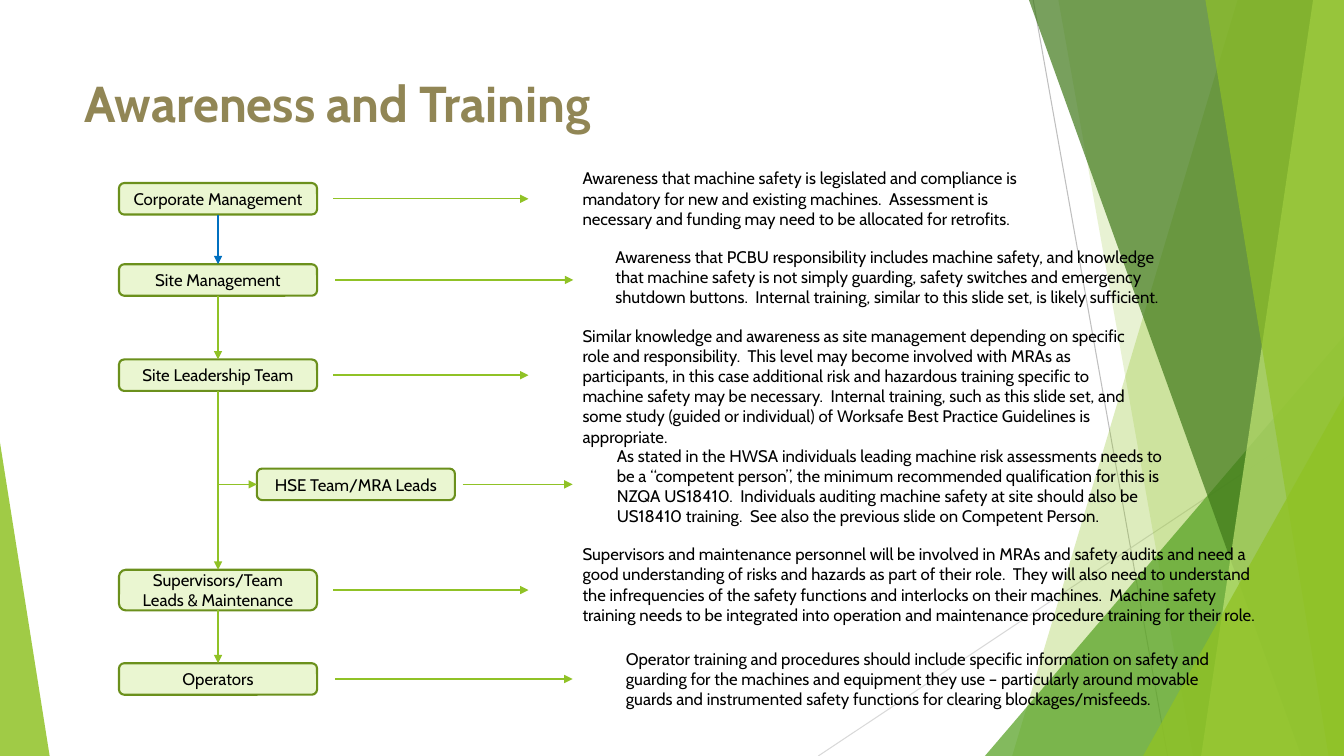
from collections import namedtuple
from dataclasses import dataclass

from lxml.etree import SubElement
from pptx import Presentation
from pptx.dml.color import RGBColor
from pptx.enum.shapes import MSO_CONNECTOR as Connector, MSO_SHAPE as Shape
from pptx.enum.text import MSO_ANCHOR as Anchor, MSO_AUTO_SIZE as AutoSize, PP_ALIGN as Align
from pptx.oxml.ns import qn
from pptx.util import Pt


@dataclass(frozen=True)
class Theme:
    """Colours, font and type sizes of the slide."""
    font: str = "Cabin"
    title_size: int = 36
    body_size: int = 12
    title: str = "918655"
    text: str = "000000"
    box: str = "EAF6D1"
    box_edge: str = "6B901C"
    lime: str = "90C226"
    pale_lime: str = "C0E474"
    green: str = "54A021"
    forest: str = "3F7819"
    blue: str = "0070C0"
    grey: str = "BFBFBF"
    pale_grey: str = "D9D9D9"


class Canvas:
    """Draws elements on one slide in one theme."""

    def __init__(self, slide, theme):
        """Keep the slide's shapes and the theme."""
        self.shapes = slide.shapes
        self.theme = theme

    def facet(self, shape, color, opacity):
        """Give a background shape a translucent fill without outline."""
        shape.shadow.inherit = False
        shape.line.fill.background()
        shape.fill.solid()
        shape.fill.fore_color.rgb = RGBColor.from_string(color)
        rgb = shape._element.spPr.find(qn("a:solidFill"))[0]
        SubElement(rgb, qn("a:alpha")).set("val", str(opacity * 1000))

    def band(self, top_left, bottom_left, color, opacity):
        """Draw a band from a slanted left edge to the slide's right edge."""
        outline = self.shapes.build_freeform(Pt(top_left), 0)
        corners = [(WIDTH, 0), (WIDTH, HEIGHT), (bottom_left, HEIGHT)]
        outline.add_line_segments([(Pt(x), Pt(y)) for x, y in corners])
        self.facet(outline.convert_to_shape(), color, opacity)

    def corner(self, left, top, width, apex, color, opacity):
        """Draw a right triangle that stands on the slide's bottom edge."""
        triangle = self.shapes.add_shape(
            Shape.ISOSCELES_TRIANGLE, Pt(left), Pt(top), Pt(width), Pt(HEIGHT - top))
        triangle.adjustments[0] = apex
        self.facet(triangle, color, opacity)

    def line(self, start, end, color, weight=1, arrow=True):
        """Draw a straight line, with an arrowhead if wanted."""
        line = self.shapes.add_connector(
            Connector.STRAIGHT, *(Pt(value) for value in (*start, *end)))
        line.line.color.rgb = RGBColor.from_string(color)
        line.line.width = Pt(weight)
        properties = line._element.spPr
        if arrow:
            SubElement(properties.find(qn("a:ln")), qn("a:tailEnd")).set("type", "triangle")
        SubElement(properties, qn("a:effectLst"))
        return line

    def link(self, upper, lower, color):
        """Join two boxes with a downward arrow."""
        arrow = self.line((0, 0), (0, 0), color)
        arrow.begin_connect(upper, 2)
        arrow.end_connect(lower, 0)

    def add_words(self, frame, words, size, color, bold=False):
        """Add one run of text to a frame."""
        frame.word_wrap = True
        run = frame.paragraphs[0].add_run()
        run.text = words
        run.font.name = self.theme.font
        run.font.size = Pt(size)
        run.font.bold = bold
        run.font.color.rgb = RGBColor.from_string(color)

    def heading(self, words, left, top, width, height):
        """Add the slide title."""
        frame = self.shapes.add_textbox(Pt(left), Pt(top), Pt(width), Pt(height)).text_frame
        self.add_words(frame, words, self.theme.title_size, self.theme.title, True)

    def note(self, words, left, top, width, height):
        """Add a training description."""
        frame = self.shapes.add_textbox(Pt(left), Pt(top), Pt(width), Pt(height)).text_frame
        self.add_words(frame, words, self.theme.body_size, self.theme.text)
        frame.auto_size = AutoSize.SHAPE_TO_FIT_TEXT

    def box(self, words, left, middle, height):
        """Draw a role box centred on a height."""
        box = self.shapes.add_shape(
            Shape.ROUNDED_RECTANGLE, Pt(left), Pt(middle - height / 2), Pt(BOX_WIDTH), Pt(height))
        box.shadow.inherit = False
        box.fill.solid()
        box.fill.fore_color.rgb = RGBColor.from_string(self.theme.box)
        box.line.color.rgb = RGBColor.from_string(self.theme.box_edge)
        box.line.width = Pt(1.5)
        frame = box.text_frame
        frame.vertical_anchor = Anchor.MIDDLE
        frame.paragraphs[0].alignment = Align.CENTER
        self.add_words(frame, words, self.theme.body_size, self.theme.text)
        return box


WIDTH, HEIGHT = 960, 540
BOX_WIDTH, SPINE_LEFT, BRANCH_LEFT = 141.5, 85, 183.5
SPINE_CENTER = SPINE_LEFT + BOX_WIDTH / 2

Role = namedtuple("Role", "name left middle height arrow note_at note")
ROLES = [
    Role("Corporate Management", SPINE_LEFT, 142, 22.5, (238, 377.5), (409, 116.5, 347, 51),
         "Awareness that machine safety is legislated and compliance is mandatory for new and "
         "existing machines.  Assessment is necessary and funding may need to be allocated for "
         "retrofits."),
    Role("Site Management", SPINE_LEFT, 200, 22.5, (239.5, 409.5), (432.5, 172.5, 411, 51),
         "Awareness that PCBU responsibility includes machine safety, and knowledge that machine "
         "safety is not simply guarding, safety switches and emergency shutdown buttons.  Internal "
         "training, similar to this slide set, is likely sufficient."),
    Role("Site Leadership Team", SPINE_LEFT, 268, 22.5, (238, 377.5), (409, 229, 411, 80),
         "Similar knowledge and awareness as site management depending on specific role and "
         "responsibility.  This level may become involved with MRAs as participants, in this case "
         "additional risk and hazardous training specific to machine safety may be necessary.  "
         "Internal training, such as this slide set, and some study (guided or individual) of "
         "Worksafe Best Practice Guidelines is appropriate."),
    Role("HSE Team/MRA Leads", BRANCH_LEFT, 346, 22.5, (330.5, 409), (433.5, 314.5, 416, 65.5),
         "As stated in the HWSA individuals leading machine risk assessments needs to be a "
         "“competent person”, the minimum recommended qualification for this is NZQA US18410.  "
         "Individuals auditing machine safety at site should also be US18410 training.  See also "
         "the previous slide on Competent Person."),
    Role("Supervisors/Team Leads & Maintenance", SPINE_LEFT, 421.5, 29, (238, 377.5),
         (409, 385, 507.5, 65.5),
         "Supervisors and maintenance personnel will be involved in MRAs and safety audits and need "
         "a good understanding of risks and hazards as part of their role.  They will also need to "
         "understand the infrequencies of the safety functions and interlocks on their machines.  "
         "Machine safety training needs to be integrated into operation and maintenance procedure "
         "training for their role."),
    Role("Operators", SPINE_LEFT, 485, 22.5, (239.5, 409), (440, 459.5, 445, 51),
         "Operator training and procedures should include specific information on safety and "
         "guarding for the machines and equipment they use – particularly around movable guards "
         "and instrumented safety functions for clearing blockages/misfeeds."),
]


def draw_background(canvas, theme):
    """Draw the green facets and thin lines."""
    canvas.line((738, 0), (834, HEIGHT), theme.grey, 0.75, False)
    canvas.line((WIDTH, 290), (584.5, HEIGHT), theme.pale_grey, 0.75, False)
    canvas.band(884, 723, theme.lime, 30)
    canvas.band(756, 852, theme.lime, 20)
    canvas.corner(703.5, 240, 256.5, 1, theme.green, 72)
    canvas.band(735, 929.5, theme.forest, 70)
    canvas.band(938, 858, theme.pale_lime, 70)
    canvas.band(861, 949, theme.lime, 65)
    canvas.corner(816.5, 283, 143.5, 1, theme.lime, 80)
    canvas.corner(0, 316, 35.5, 0, theme.lime, 85)


def draw_roles(canvas, theme):
    """Draw the role chain with its training descriptions."""
    spine = []
    for role in ROLES:
        box = canvas.box(role.name, role.left, role.middle, role.height)
        start, end = role.arrow
        canvas.line((start, role.middle), (end, role.middle), theme.lime)
        canvas.note(role.note, *role.note_at)
        if role.left == SPINE_LEFT:
            spine.append(box)
        else:
            canvas.line((SPINE_CENTER, role.middle), (role.left, role.middle), theme.lime)
    for upper, lower in zip(spine, spine[1:]):
        canvas.link(upper, lower, theme.blue if upper is spine[0] else theme.lime)


def main():
    """Build and save the slide."""
    deck = Presentation()
    deck.slide_width, deck.slide_height = Pt(WIDTH), Pt(HEIGHT)
    theme = Theme()
    canvas = Canvas(deck.slides.add_slide(deck.slide_layouts[6]), theme)
    draw_background(canvas, theme)
    canvas.heading("Awareness and Training", 53.5, 48, 677, 104)
    draw_roles(canvas, theme)
    deck.save("out.pptx")


if __name__ == "__main__":
    main()
